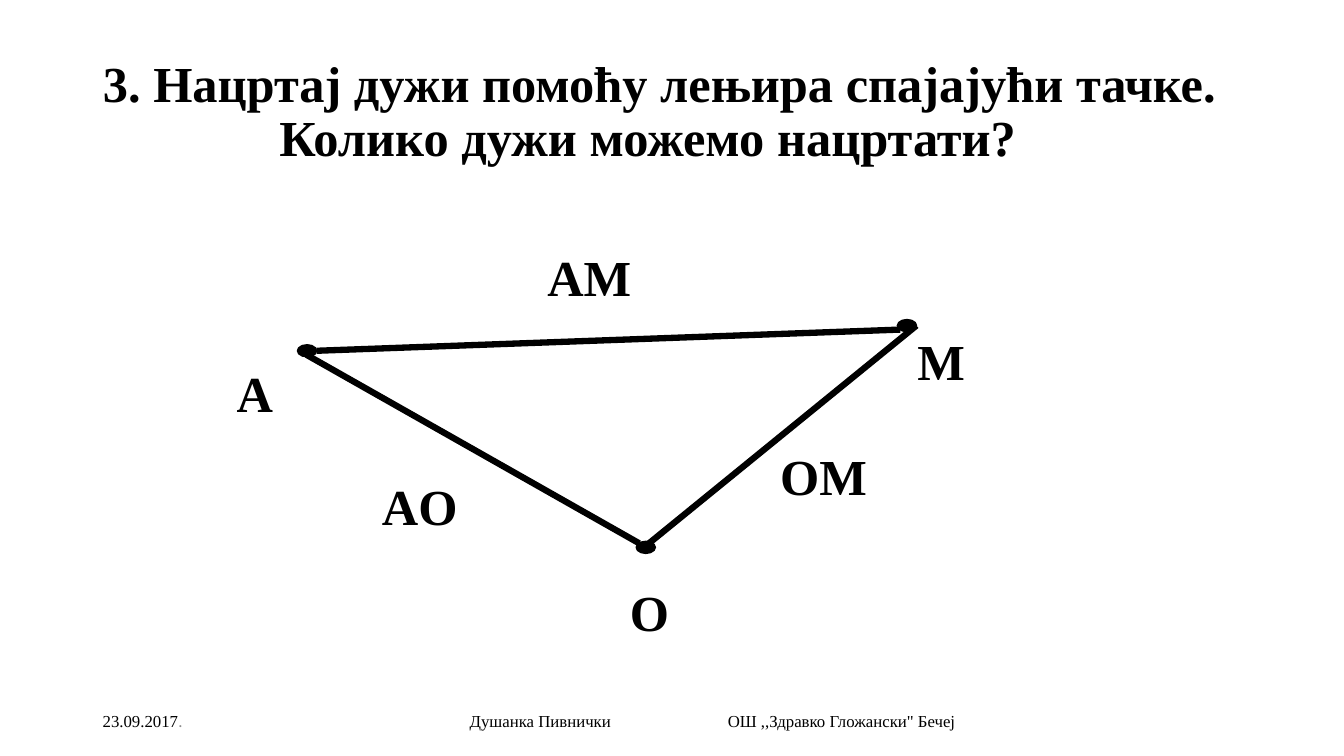
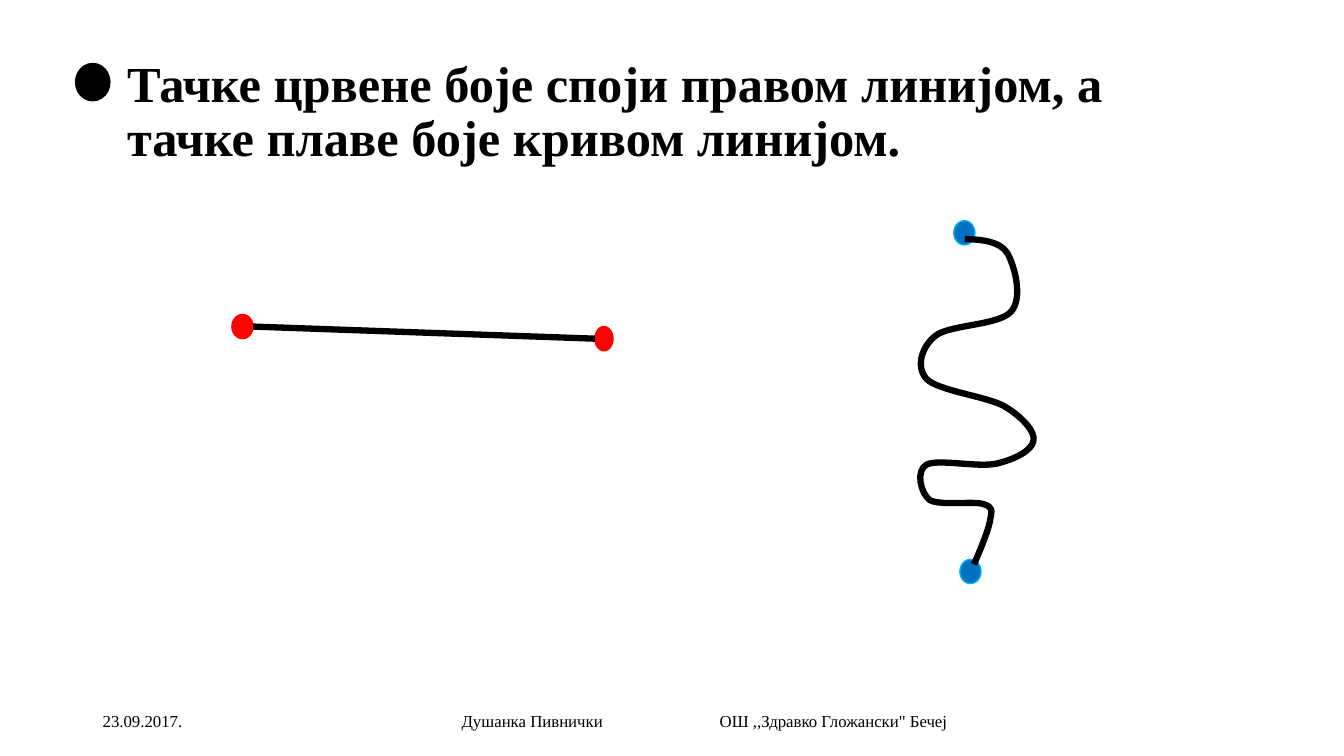
from lxml.etree import SubElement
from pptx import Presentation
from pptx.dml.color import RGBColor
from pptx.enum.shapes import MSO_CONNECTOR, MSO_SHAPE
from pptx.enum.text import MSO_ANCHOR, MSO_AUTO_SIZE, PP_ALIGN
from pptx.oxml.ns import qn
from pptx.util import Pt

PX = 9144  # EMU in one px, 100 px to the inch
BLACK, RED, BLUE, SKY, GREY = "000000", "FF0000", "0070C0", "00B0F0", "8C8C8C"


def px(*lengths):
    return [length * PX for length in lengths]


def color(hex_string):
    return RGBColor.from_string(hex_string)


class Worksheet:
    """Holds the shared style and the slide being filled."""

    font_name = "Times New Roman"
    heading_size, footer_size = 36, 12
    dot_outline, stroke_width = 1, 4.5

    def __init__(self):
        self.deck = Presentation()
        self.deck.slide_width, self.deck.slide_height = px(1333, 750)
        self.slide = None

    def new_slide(self):
        self.slide = self.deck.slides.add_slide(self.deck.slide_layouts[5])

    def set_words(self, holder, words, size, bold=False, anchor=MSO_ANCHOR.TOP):
        """Fill a shape with one left-aligned paragraph and return it."""
        frame = holder.text_frame
        frame.text = words
        frame.word_wrap = True
        frame.auto_size = MSO_AUTO_SIZE.NONE
        frame.vertical_anchor = anchor
        paragraph = frame.paragraphs[0]
        paragraph.alignment = PP_ALIGN.LEFT
        font = paragraph.font
        font.name, font.size, font.bold = self.font_name, Pt(size), bold
        font.color.rgb = color(BLACK)
        return paragraph

    def title(self, words, left, width, hanging=0):
        heading = self.slide.shapes.title
        heading.left, heading.top, heading.width, heading.height = px(left, 40, width, 145)
        paragraph = self.set_words(heading, words, self.heading_size, True, MSO_ANCHOR.MIDDLE)
        paragraph.line_spacing = 0.9
        if hanging:
            properties = paragraph.font._element.getparent()
            properties.set("marL", str(hanging * PX))
            properties.set("indent", str(-hanging * PX))

    def label(self, words, left, top, width=70):
        box = self.slide.shapes.add_textbox(*px(left, top, width, 50))
        self.set_words(box, words, self.heading_size, bold=True)

    def footer(self, author_left, faint_dot=False):
        """Date, author and school; the date's last dot may be faint."""
        entries = (
            ("23.09.2017" if faint_dot else "23.09.2017.", 92, 300),
            ("Душанка Пивнички", author_left, 200),
            ("ОШ ,,Здравко Гложански\" Бечеј", author_left + 256, 300),
        )
        for words, left, width in entries:
            box = self.slide.shapes.add_textbox(*px(left, 695, width, 40))
            paragraph = self.set_words(box, words, self.footer_size, anchor=MSO_ANCHOR.MIDDLE)
            if faint_dot and left == 92:
                dot = paragraph.add_run()
                dot.text = "."
                dot.font.name = "Calibri"
                dot.font.color.rgb = color(GREY)

    def stroke(self, line, hex_string=BLACK, width=stroke_width):
        line.color.rgb = color(hex_string)
        line.width = Pt(width)

    def dot(self, left, top, width, height, fill=BLACK, outline=None):
        oval = self.slide.shapes.add_shape(MSO_SHAPE.OVAL, *px(left, top, width, height))
        oval.shadow.inherit = False
        oval.fill.solid()
        oval.fill.fore_color.rgb = color(fill)
        self.stroke(oval.line, outline or fill, self.dot_outline)

    def segment(self, x1, y1, x2, y2):
        connector = self.slide.shapes.add_connector(MSO_CONNECTOR.STRAIGHT, *px(x1, y1, x2, y2))
        self.stroke(connector.line)
        SubElement(connector._element.spPr, qn("a:effectLst"))

    def curve(self, start, points):
        """Draw Bezier arcs; each three points are two controls and an end."""
        builder = self.slide.shapes.build_freeform(*start, scale=PX)
        builder.add_line_segments(points, close=False)
        outline = builder.convert_to_shape()
        outline.shadow.inherit = False
        outline.fill.background()
        self.stroke(outline.line)
        route = next(outline._element.iter(qn("a:path")))
        steps = route.findall(qn("a:lnTo"))
        for first in range(0, len(steps), 3):
            arc = SubElement(route, qn("a:cubicBezTo"))
            for step in steps[first:first + 3]:
                arc.append(step[0])
                route.remove(step)


def segments_slide(sheet):
    sheet.new_slide()
    sheet.title("3. Нацртај дужи помоћу лењира спајајући тачке. Колико дужи можемо нацртати?",
                92, 1150, hanging=175)
    sheet.footer(456, faint_dot=True)
    for left, top in ((295, 342), (890, 317), (631, 537)):
        sheet.dot(left, top, 19, 12)
    for name, left, top in (("A", 225, 354), ("M", 900, 323), ("О", 615, 572)):
        sheet.label(name, left, top)
    for name, left, top, ends in (
        ("AМ", 533, 239, (314, 348, 893, 327)),
        ("AО", 369, 466, (304, 352, 634, 539)),
        ("ОМ", 764, 437, (640, 542, 909, 323)),
    ):
        sheet.segment(*ends)
        sheet.label(name, left, top, 117)


def lines_slide(sheet):
    sheet.new_slide()
    sheet.title("Тачке црвене боје споји правом линијом, а тачке плаве боје кривом линијом.",
                116, 1125)
    sheet.footer(448)
    sheet.dot(75, 63, 34, 37)
    sheet.dot(230, 312, 21, 24, RED)
    sheet.dot(590, 324, 18, 24, RED)
    sheet.dot(946, 219, 21, 24, BLUE, SKY)
    sheet.dot(952, 555, 21, 24, BLUE, SKY)
    sheet.segment(251, 324, 590, 336)
    sheet.curve((957, 237), [
        (974, 238), (991, 239), (999, 251),
        (1006, 263), (1015, 295), (1003, 309),
        (991, 323), (942, 322), (928, 333),
        (914, 344), (908, 364), (919, 376),
        (931, 388), (978, 393), (996, 403),
        (1013, 413), (1027, 428), (1025, 437),
        (1024, 447), (1006, 456), (988, 460),
        (970, 464), (930, 455), (919, 461),
        (908, 467), (913, 489), (922, 496),
        (932, 502), (965, 497), (975, 500),
        (985, 503), (984, 506), (982, 516),
        (981, 526), (966, 560), (966, 560),
    ])


def main():
    sheet = Worksheet()
    segments_slide(sheet)
    lines_slide(sheet)
    sheet.deck.save("out.pptx")


if __name__ == "__main__":
    main()
